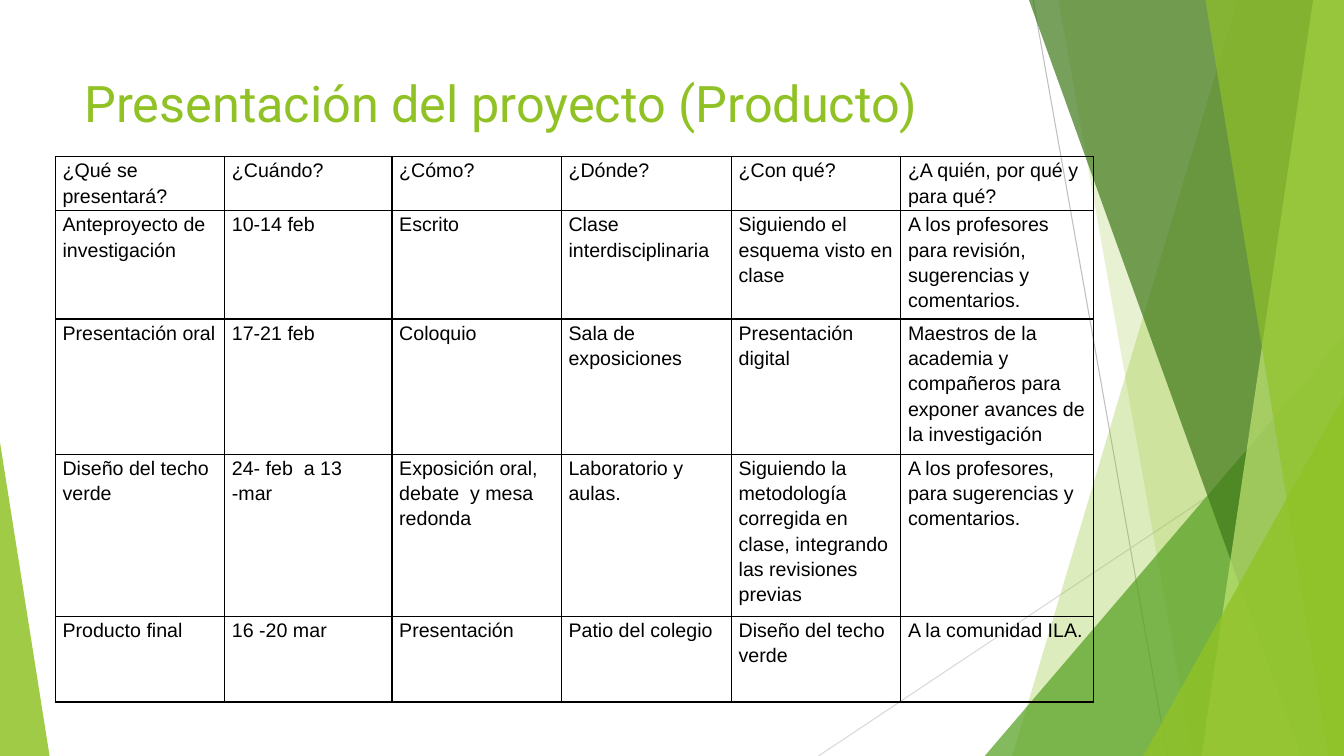
from lxml import etree
from pptx import Presentation
from pptx.dml.color import RGBColor
from pptx.enum import shapes, text
from pptx.oxml import ns
from pptx.util import Pt

BLACK = RGBColor(0x00, 0x00, 0x00)
LIME = RGBColor(0x90, 0xC2, 0x26)
PALE_LIME = RGBColor(0xC0, 0xE4, 0x74)
GREEN = RGBColor(0x54, 0xA0, 0x21)
DARK_GREEN = RGBColor(0x3F, 0x78, 0x19)
GREY = RGBColor(0xBF, 0xBF, 0xBF)
LIGHT_GREY = RGBColor(0xD9, 0xD9, 0xD9)

WIDTH, HEIGHT = 960, 540
TITLE = "Presentación del proyecto (Producto)"
ROWS = [
    ("¿Qué se presentará?", "¿Cuándo?", "¿Cómo?", "¿Dónde?", "¿Con qué?",
     "¿A quién, por qué y para qué?"),
    ("Anteproyecto de investigación", "10-14 feb", "Escrito", "Clase interdisciplinaria",
     "Siguiendo el esquema visto en clase",
     "A los profesores para revisión, sugerencias y comentarios."),
    ("Presentación oral", "17-21 feb", "Coloquio", "Sala de exposiciones",
     "Presentación digital",
     "Maestros de la academia y compañeros para exponer avances de la investigación"),
    ("Diseño del techo verde", "24- feb  a 13 -mar", "Exposición oral, debate  y mesa redonda",
     "Laboratorio y  aulas.",
     "Siguiendo la metodología corregida en clase, integrando las revisiones previas",
     "A los profesores, para sugerencias y comentarios."),
    ("Producto final", "16 -20 mar", "Presentación", "Patio del colegio",
     "Diseño del techo verde", "A la comunidad ILA."),
]
COLUMN_WIDTHS = [121, 119.5, 121, 121.5, 121, 137.5]
ROW_HEIGHTS = [37.2, 74, 92.9, 111.6, 61.2]
TABLE_LEFT, TABLE_TOP = 39.5, 112

# x1, y1, x2, y2, colour
RAYS = [(738, 0, 833.8, HEIGHT, GREY), (WIDTH, 290, 584.6, HEIGHT, LIGHT_GREY)]
# Bands reach the right edge: x at top, x at bottom, colour, opacity in %
BANDS_BEHIND = [(884, 723, LIME, 30), (756, 851.8, LIME, 20)]
BANDS_FRONT = [(735, 929.5, DARK_GREEN, 70), (938, 858.2, PALE_LIME, 70),
               (861, 949, LIME, 65)]
# Corners rest on the bottom edge: left, width, height, apex, colour, opacity in %
CORNER_BEHIND = (703.4, 256.6, 300, 1, GREEN, 72)
CORNERS_FRONT = [(816.6, 143.4, 257, 1, LIME, 80), (0, 35.4, 224, 0, LIME, 85)]


def add_child(parent, tag, **attributes):
    return etree.SubElement(parent, ns.qn(tag), attributes)


def paint(shape, colour, opacity):
    shape.shadow.inherit = False
    shape.line.fill.background()
    shape.fill.solid()
    shape.fill.fore_color.rgb = colour
    colour_element = next(shape.element.spPr.iter(ns.qn("a:srgbClr")))
    add_child(colour_element, "a:alpha", val=str(opacity * 1000))


def add_ray(page, x1, y1, x2, y2, colour):
    ray = page.shapes.add_connector(shapes.MSO_CONNECTOR.STRAIGHT,
                                    Pt(x1), Pt(y1), Pt(x2), Pt(y2))
    ray.line.color.rgb = colour
    ray.line.width = Pt(0.75)
    add_child(ray.element.spPr, "a:effectLst")


def add_band(page, top_x, bottom_x, colour, opacity):
    outline = page.shapes.build_freeform(Pt(top_x), 0)
    corners = [(WIDTH, 0), (WIDTH, HEIGHT), (bottom_x, HEIGHT)]
    outline.add_line_segments([(Pt(x), Pt(y)) for x, y in corners], close=True)
    paint(outline.convert_to_shape(), colour, opacity)


def add_corner(page, left, width, height, apex, colour, opacity):
    corner = page.shapes.add_shape(shapes.MSO_SHAPE.ISOSCELES_TRIANGLE, Pt(left),
                                   Pt(HEIGHT - height), Pt(width), Pt(height))
    corner.adjustments[0] = apex
    paint(corner, colour, opacity)


def add_title(page):
    box = page.shapes.add_textbox(Pt(53.3), Pt(48.2), Pt(677), Pt(104))
    box.text_frame.word_wrap = True
    box.text_frame.vertical_anchor = text.MSO_ANCHOR.TOP
    para = box.text_frame.paragraphs[0]
    para.text = TITLE
    para.font.name, para.font.size = "Roboto", Pt(36)
    para.font.color.rgb = LIME


def add_borders(cell):
    properties = cell._tc.get_or_add_tcPr()
    for side in ("a:lnL", "a:lnR", "a:lnT", "a:lnB"):
        line = add_child(properties, side, w=str(Pt(1)))
        fill = add_child(line, "a:solidFill")
        add_child(fill, "a:srgbClr", val=str(BLACK))


def fill_cell(cell, wording):
    cell.margin_left = cell.margin_right = Pt(5.2)
    cell.margin_top = cell.margin_bottom = 0
    add_borders(cell)
    cell.fill.background()
    para = cell.text_frame.paragraphs[0]
    para.text = wording
    para.line_spacing = 1.15
    para.font.name, para.font.size = "Arial", Pt(14)
    para.font.color.rgb = BLACK


def add_schedule(page):
    frame = page.shapes.add_table(len(ROWS), len(COLUMN_WIDTHS), Pt(TABLE_LEFT), Pt(TABLE_TOP),
                                  Pt(sum(COLUMN_WIDTHS)), Pt(sum(ROW_HEIGHTS)))
    table = frame.table
    table.first_row = table.horz_banding = False
    for column, width in zip(table.columns, COLUMN_WIDTHS):
        column.width = Pt(width)
    for row, height, wordings in zip(table.rows, ROW_HEIGHTS, ROWS):
        row.height = Pt(height)
        for cell, wording in zip(row.cells, wordings):
            fill_cell(cell, wording)


def main():
    deck = Presentation()
    deck.slide_width, deck.slide_height = Pt(WIDTH), Pt(HEIGHT)
    page = deck.slides.add_slide(deck.slide_layouts[6])
    for ray in RAYS:
        add_ray(page, *ray)
    for band in BANDS_BEHIND:
        add_band(page, *band)
    add_corner(page, *CORNER_BEHIND)
    for band in BANDS_FRONT:
        add_band(page, *band)
    for corner in CORNERS_FRONT:
        add_corner(page, *corner)
    add_title(page)
    add_schedule(page)
    deck.save("out.pptx")


if __name__ == "__main__":
    main()
